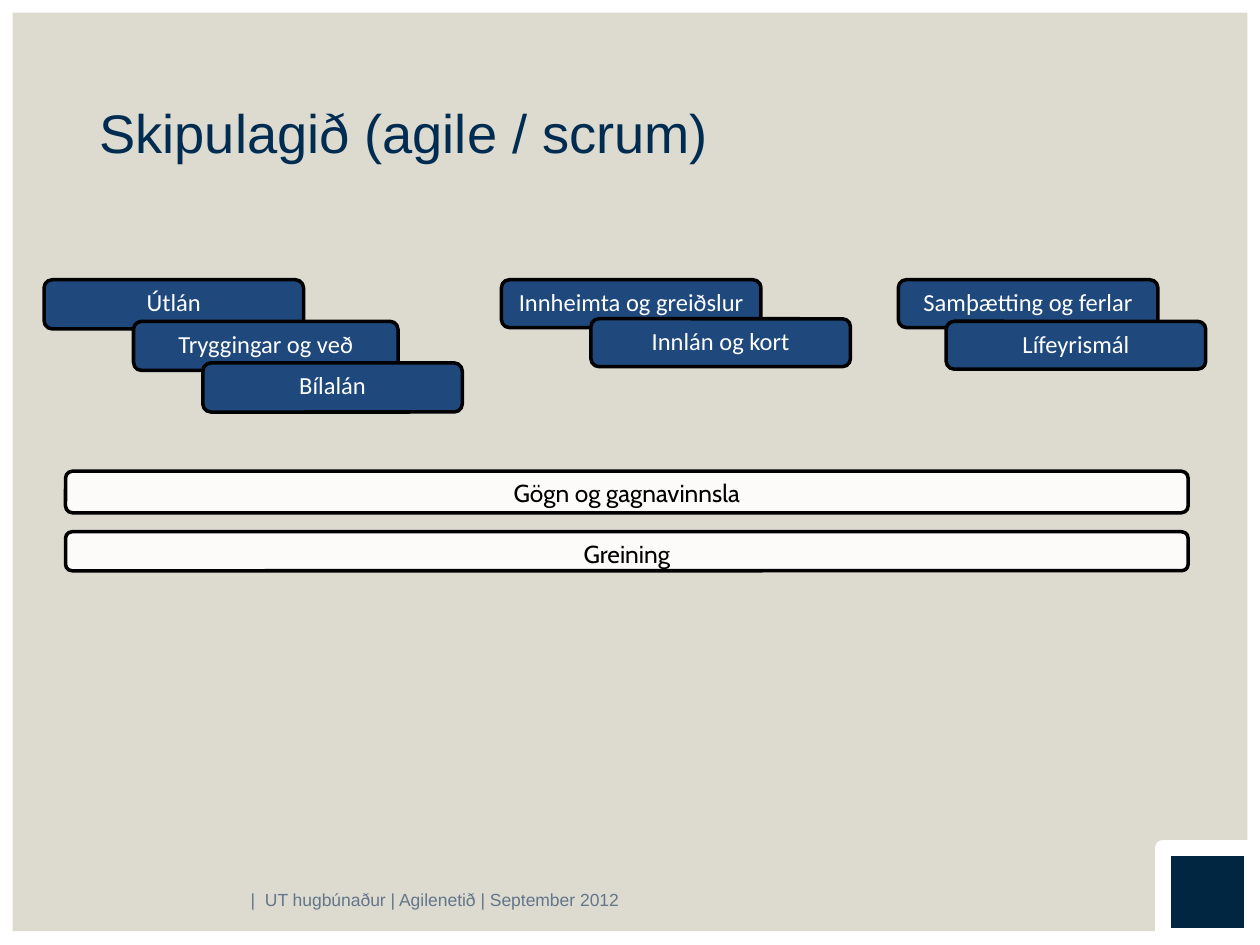
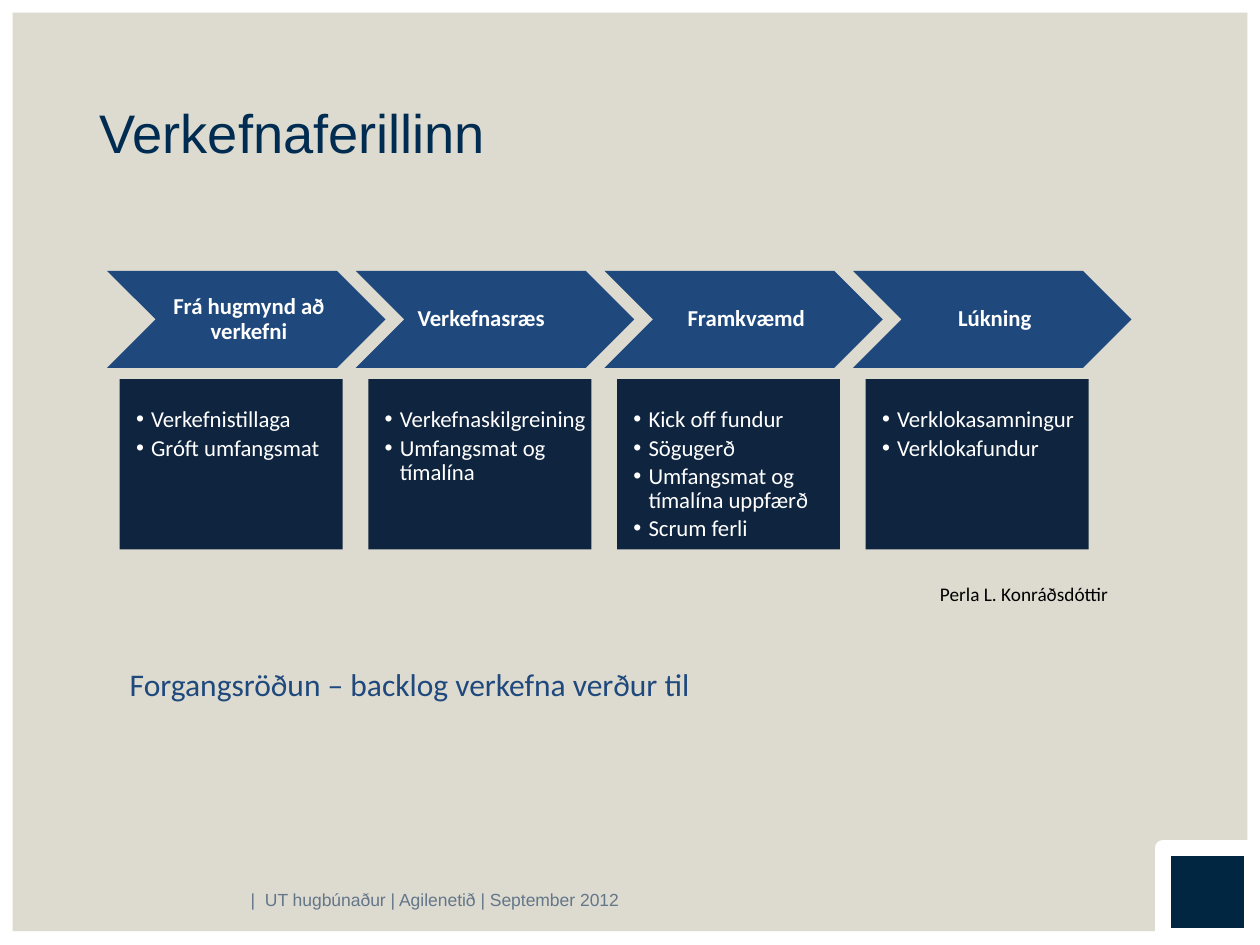
from lxml import etree
from pptx import Presentation
from pptx import util as u
from pptx.dml.color import RGBColor
from pptx.enum import shapes, text
from pptx.oxml.ns import qn

NAVY, BLUE, INK, SAND = "002642", "1F497D", "0F243E", "DDDACF"
WHITE, BLACK, PAPER = "FFFFFF", "000000", "FCFBF9"
TITLE_COLOUR, FOOTER_COLOUR = "002C51", "63768A"
FOOTER = "|  UT hugbúnaður | Agilenetið | September 2012"
NORMAL_INSETS = (0.07, 0.04, 0.07, 0.04)
LEFT, CENTER = text.PP_ALIGN.LEFT, text.PP_ALIGN.CENTER
TOP, MIDDLE = text.MSO_ANCHOR.TOP, text.MSO_ANCHOR.MIDDLE
SHAPE = shapes.MSO_SHAPE


def colour(value):
    return RGBColor.from_string(value)


def apply(target, values):
    for name, value in values.items():
        setattr(target, name, value)


class Deck:
    def __init__(self):
        self.presentation = Presentation()
        apply(self.presentation, {"slide_width": u.Inches(10), "slide_height": u.Inches(7.5)})
        self.slide = None

    def place(self, shape, box):
        names = ("left", "top", "width", "height")
        apply(shape, dict(zip(names, map(u.Inches, box))))

    def raise_to_front(self, shape):
        shape.element.getparent().append(shape.element)

    def set_text(self, shape, lines, size, font, ink, align=LEFT, anchor=TOP,
                 insets=NORMAL_INSETS, wrap=True, bold=False, bullets=False, spacing=1.0):
        frame = shape.text_frame
        frame.text = "\n".join(lines)
        names = ("margin_left", "margin_top", "margin_right", "margin_bottom")
        apply(frame, dict(zip(names, map(u.Inches, insets))))
        apply(frame, {"word_wrap": wrap, "vertical_anchor": anchor,
                      "auto_size": text.MSO_AUTO_SIZE.NONE})
        for paragraph in frame.paragraphs:
            if bullets:
                self.add_bullet(paragraph)
            apply(paragraph, {"alignment": align, "line_spacing": spacing,
                              "space_before": u.Pt(0),
                              "space_after": u.Pt(2 if bullets else 0)})
            for run in paragraph.runs:
                apply(run.font, {"size": u.Pt(size), "name": font, "bold": bold})
                run.font.color.rgb = colour(ink)

    def add_bullet(self, paragraph):
        properties = paragraph._p.get_or_add_pPr()
        properties.set("marL", str(u.Inches(0.25)))
        properties.set("indent", str(u.Inches(-0.12)))
        etree.SubElement(properties, qn("a:buChar")).set("char", "•")

    def fill(self, shape, value):
        shape.fill.solid()
        shape.fill.fore_color.rgb = colour(value)

    def block(self, kind, box, fill, line=None, weight=0):
        shape = self.slide.shapes.add_shape(kind, *map(u.Inches, box))
        shape.shadow.inherit = False
        self.fill(shape, fill)
        if line:
            shape.line.color.rgb = colour(line)
            shape.line.width = u.Pt(weight)
        else:
            shape.line.fill.background()
        return shape

    def bar(self, label, box, fill=BLUE, font="Calibri", ink=WHITE):
        shape = self.block(SHAPE.ROUNDED_RECTANGLE, box, fill, BLACK, 2)
        self.set_text(shape, [label], 14, font, ink, CENTER)

    def chevron(self, label, box, right_inset):
        shape = self.block(SHAPE.CHEVRON, box, BLUE)
        self.set_text(shape, [label], 13, "Calibri", WHITE, CENTER, MIDDLE,
                      (0.06, 0.02, right_inset, 0.02), bold=True, spacing=0.9)

    def list_card(self, placeholder, lines, box):
        self.place(placeholder, box)
        self.fill(placeholder, INK)
        self.set_text(placeholder, lines, 13, "Calibri", WHITE,
                      insets=(0, 0.23, 0, 0), bullets=True, spacing=0.9)
        self.raise_to_front(placeholder)

    def note(self, label, box, size, ink, font="Calibri", **layout):
        shape = self.slide.shapes.add_textbox(*map(u.Inches, box))
        self.set_text(shape, [label], size, font, ink, **layout)

    def start_slide(self, title, layout):
        self.slide = self.presentation.slides.add_slide(self.presentation.slide_layouts[layout])
        self.block(SHAPE.RECTANGLE, (0.1, 0.1, 9.8, 7.29), SAND)
        self.block(SHAPE.RECTANGLE, (9.23, 6.73, 0.71, 0.7), NAVY, WHITE, 9)
        heading = self.slide.shapes.title
        self.place(heading, (0.79, 0.6, 8.42, 0.89))
        self.set_text(heading, [title], 31, "Arial", TITLE_COLOUR,
                      anchor=MIDDLE, insets=(0, 0, 0, 0))
        self.raise_to_front(heading)
        self.note(FOOTER, (1.92, 7.04, 7.2, 0.19), 10, FOOTER_COLOUR, "Arial", anchor=MIDDLE)


def build_teams(deck):
    deck.start_slide("Skipulagið (agile / scrum)", 5)
    teams = [
        ("Útlán", (0.35, 2.22, 2.06, 0.39)),
        ("Tryggingar og veð", (1.06, 2.55, 2.1, 0.39)),
        ("Bílalán", (1.61, 2.88, 2.06, 0.39)),
        ("Innheimta og greiðslur", (3.98, 2.22, 2.06, 0.38)),
        ("Innlán og kort", (4.69, 2.53, 2.06, 0.38)),
        ("Samþætting og ferlar", (7.13, 2.22, 2.06, 0.38)),
        ("Lífeyrismál", (7.51, 2.55, 2.06, 0.38)),
    ]
    for label, box in teams:
        deck.bar(label, box)
    for label, top, height in [("Gögn og gagnavinnsla", 3.74, 0.33), ("Greining", 4.22, 0.31)]:
        deck.bar(label, (0.52, top, 8.91, height), PAPER, "Cabin", BLACK)


def build_process(deck):
    deck.start_slide("Verkefnaferillinn", 4)
    stages = [
        ("Frá hugmynd að verkefni", 0.02, ["Verkefnistillaga", "Gróft umfangsmat"]),
        ("Verkefnasræs", 0.28, ["Verkefnaskilgreining", "Umfangsmat og tímalína"]),
        ("Framkvæmd", 0.02, ["Kick off fundur", "Sögugerð",
                             "Umfangsmat og tímalína uppfærð", "Scrum ferli"]),
        ("Lúkning", 0.02, ["Verklokasamningur", "Verklokafundur"]),
    ]
    bodies = [shape for shape in deck.slide.placeholders if shape.placeholder_format.idx > 0]
    bodies.sort(key=lambda shape: shape.placeholder_format.idx)
    pitch = (6.77 - 0.85) / 3
    for index, (label, right_inset, tasks) in enumerate(stages):
        left = 0.85 + index * pitch
        deck.chevron(label, (left, 2.15, 2.21, 0.77), right_inset)
        deck.list_card(bodies[index], tasks, (left + 0.1, 3.01, 1.77, 1.35))
    deck.note("Forgangsröðun – backlog verkefna verður til", (0.96, 5.24, 4.64, 0.37),
              18, BLUE, wrap=False)
    deck.note("Perla L. Konráðsdóttir", (7.39, 4.58, 1.53, 0.26), 11, BLACK, wrap=False)


def main():
    deck = Deck()
    build_teams(deck)
    build_process(deck)
    deck.presentation.save("out.pptx")


if __name__ == "__main__":
    main()
